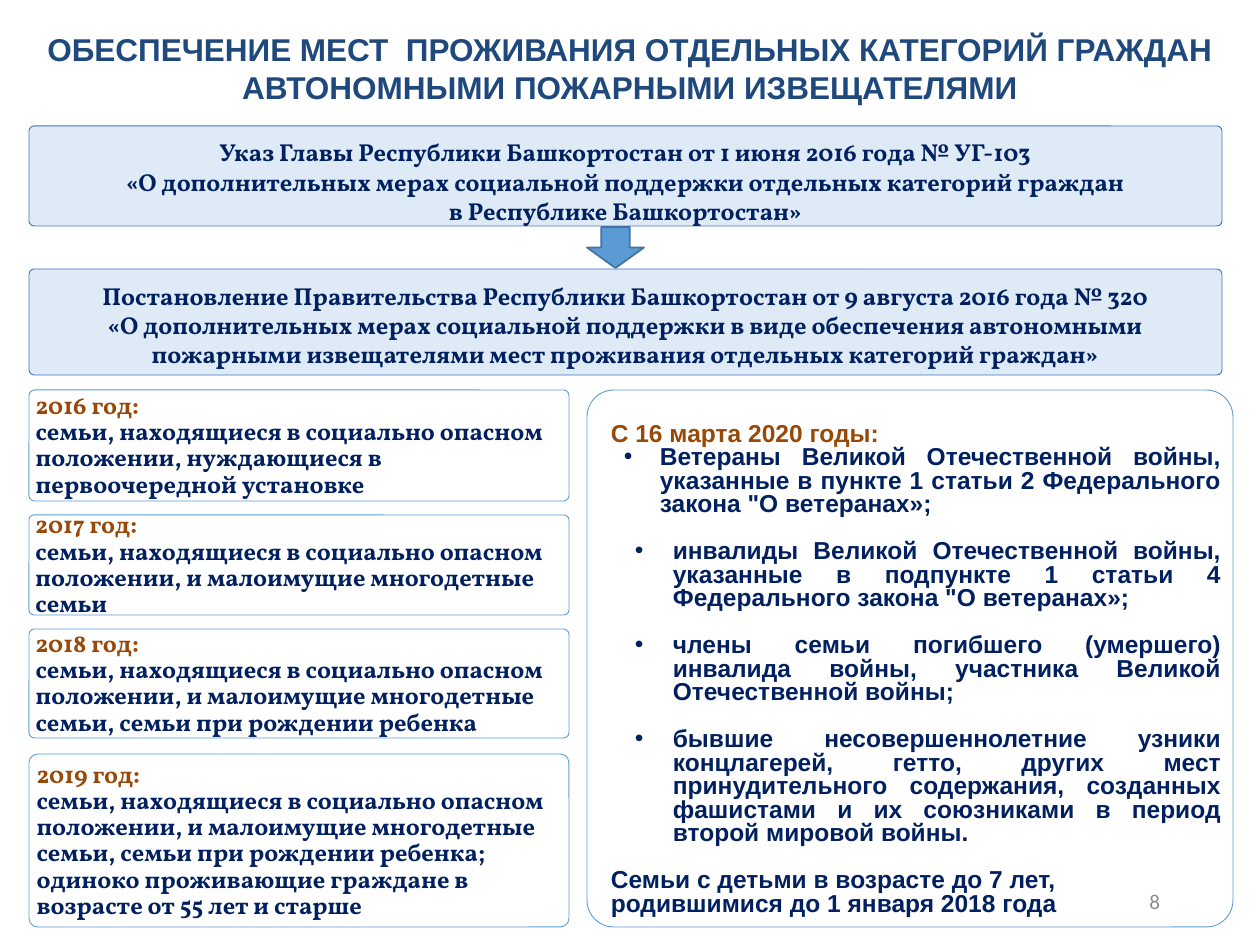
from lxml.etree import SubElement
from pptx import Presentation
from pptx.dml.color import RGBColor as Rgb
from pptx.enum.shapes import MSO_SHAPE as Kind
from pptx.enum.text import MSO_ANCHOR as Anchor, PP_ALIGN as Align
from pptx.oxml.ns import qn
from pptx.util import Pt

PX = 914400 / 126
HUE = {
    "title": "1F497D", "navy": "002060", "brown": "984807", "gray": "8C8C8C",
    "white": "FFFFFF", "pale": "DEEBF7", "blue": "5B9BD5", "edge": "4472C4", "dark": "43739E",
}

deck = Presentation()
deck.slide_width, deck.slide_height = round(1260 * PX), round(945 * PX)
slide = deck.slides.add_slide(deck.slide_layouts[6])


def put(frame, text, font="Vollkorn", size=14, hue="navy", bold=True,
        align=Align.LEFT, space=None, gap=0, left=0, hang=0):
    para = frame.paragraphs[0] if not frame.text else frame.add_paragraph()
    if hang:
        prop = para._p.get_or_add_pPr()
        prop.set("marL", str(round(left * PX)))
        prop.set("indent", str(round(-hang * PX)))
        SubElement(prop, qn("a:buFont"), typeface="Arial")
        SubElement(prop, qn("a:buChar"), char="•")
    para.alignment = align
    para.space_before = Pt(gap)
    if space:
        para.line_spacing = space
    run = para.add_run()
    run.text = text
    run.font.name, run.font.size, run.font.bold = font, Pt(size), bold
    run.font.color.rgb = Rgb.from_string(HUE[hue])


def box(area, pad, kind=None, fill="white", line="blue", width=0.5, curve=None, anchor=Anchor.TOP):
    area = [round(n * PX) for n in area]
    if kind is None:
        shape = slide.shapes.add_textbox(*area)
    else:
        shape = slide.shapes.add_shape(kind, *area)
        shape.shadow.inherit = False
        shape.fill.solid()
        shape.fill.fore_color.rgb = Rgb.from_string(HUE[fill])
        shape.line.color.rgb = Rgb.from_string(HUE[line])
        shape.line.width = Pt(width)
    if curve:
        shape.adjustments[0] = curve
    frame = shape.text_frame
    frame.word_wrap = True
    frame.vertical_anchor = anchor
    frame.margin_left, frame.margin_top, frame.margin_right, frame.margin_bottom = [
        round(n * PX) for n in pad]
    return frame


title = box((0, 25, 1260, 87), (5, 5, 5, 5))
put(title, "ОБЕСПЕЧЕНИЕ МЕСТ  ПРОЖИВАНИЯ ОТДЕЛЬНЫХ КАТЕГОРИЙ ГРАЖДАН АВТОНОМНЫМИ ПОЖАРНЫМИ ИЗВЕЩАТЕЛЯМИ",
    font="Arial", size=18, hue="title", align=Align.CENTER)

box((587, 227, 57, 41), (0, 0, 0, 0), Kind.DOWN_ARROW, "blue", "dark", 1)

acts = [
    (126, 100, ["Указ Главы Республики Башкортостан от 1 июня 2016 года № УГ-103",
                "«О дополнительных мерах социальной поддержки отдельных категорий граждан",
                "в Республике Башкортостан»"]),
    (269, 106, ["Постановление Правительства Республики Башкортостан от 9 августа 2016 года № 320",
                "«О дополнительных мерах социальной поддержки в виде обеспечения автономными "
                "пожарными извещателями мест проживания отдельных категорий граждан»"]),
]
for top, high, lines in acts:
    act = box((29, top, 1193, high), (5, 10, 5, 10), Kind.ROUNDED_RECTANGLE, "pale", "edge", curve=0.05)
    for text in lines:
        put(act, text, align=Align.CENTER)

base = "семьи, находящиеся в социально опасном положении, "
many = base + "и малоимущие многодетные семьи"
years = [
    (2016, 390, 111, [base + "нуждающиеся в первоочередной установке"]),
    (2017, 515, 100, [many]),
    (2018, 629, 109, [many + ", семьи при рождении ребенка"]),
    (2019, 754, 173, [many + ", семьи при рождении ребенка;",
                      "одиноко проживающие граждане в возрасте от 55 лет и старше"]),
]
for year, top, high, lines in years:
    card = box((29, top, 540, high), (5, 10, 5, 10), Kind.ROUNDED_RECTANGLE, curve=0.05, anchor=Anchor.MIDDLE)
    put(card, f"{year} год:", hue="brown", space=Pt(15))
    for text in lines:
        put(card, text, space=Pt(15))

panel = box((587, 390, 646, 537), (16, 29, 4, 6), Kind.ROUNDED_RECTANGLE, curve=0.05, anchor=Anchor.MIDDLE)
look = dict(font="Arial", space=0.8)
put(panel, "С 16 марта 2020 годы:", hue="brown", align=Align.JUSTIFY, **look)
groups = [
    (49, 36, 0, "Ветераны Великой Отечественной войны, указанные в пункте 1 статьи 2 "
                "Федерального закона \"О ветеранах»;"),
    (62, 38, 13.4, "инвалиды Великой Отечественной войны, указанные в подпункте 1 статьи 4 "
                   "Федерального закона \"О ветеранах»;"),
    (62, 38, 13.4, "члены семьи погибшего (умершего) инвалида войны, участника Великой Отечественной войны;"),
    (62, 38, 13.4, "бывшие несовершеннолетние узники концлагерей, гетто, других мест принудительного "
                   "содержания, созданных фашистами и их союзниками в период второй мировой войны."),
]
for left, hang, gap, text in groups:
    put(panel, text, align=Align.JUSTIFY, left=left, hang=hang, gap=gap, **look)
put(panel, "Семьи с детьми в возрасте до 7 лет, родившимися до 1 января 2018 года", gap=13.4, **look)

page = box((890, 876, 283, 50), (13, 6, 13, 6), anchor=Anchor.MIDDLE)
put(page, "8", font="Calibri", size=12, hue="gray", bold=False, align=Align.RIGHT)

deck.save("out.pptx")
